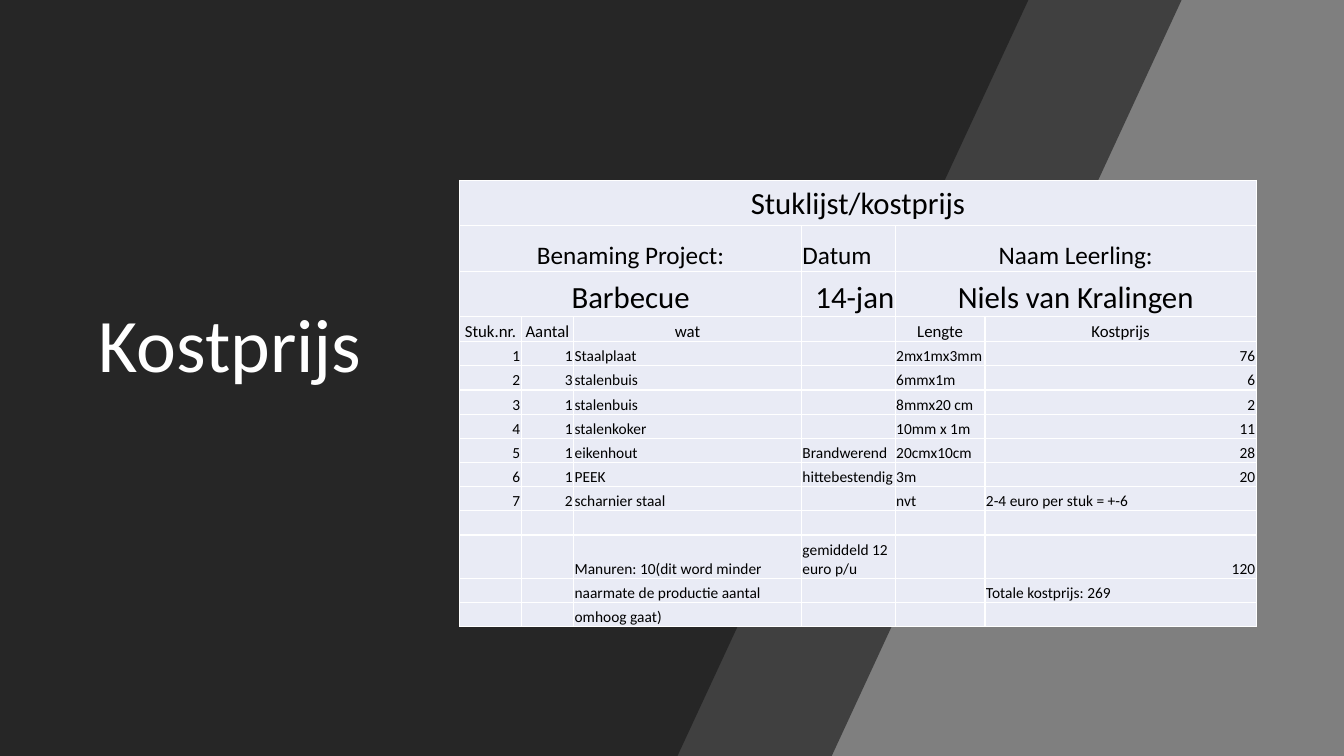
from lxml import etree
from pptx import Presentation
from pptx.dml.color import RGBColor
from pptx.enum.shapes import MSO_SHAPE
from pptx.enum.text import MSO_ANCHOR, PP_ALIGN
from pptx.oxml.ns import qn
from pptx.util import Inches, Pt

LEFT, MID, RIGHT = PP_ALIGN.LEFT, PP_ALIGN.CENTER, PP_ALIGN.RIGHT
CENTRE, BOTTOM = MSO_ANCHOR.MIDDLE, MSO_ANCHOR.BOTTOM
RECT = MSO_SHAPE.RECTANGLE

FONT = "Calibri"
COLORS = {"back": "7C7C7C", "grey": "7F7F7F", "dark": "262626",
          "cell": "E9EBF5", "white": "FFFFFF", "black": "000000"}
WIDE, HIGH = 13.33, 7.5
TITLE = "Kostprijs"
BANDS = [
    ([(1.36, HIGH), (8.25, HIGH), (11.72, 0), (1.36, 0)], 70),
    ([(0, HIGH), (6.72, HIGH), (10.2, 0), (0, 0)], 100),
]
COLS = [0.61, 0.52, 2.26, 0.93, 0.89, 2.69]
ROWS = [
    ["Stuklijst/kostprijs", "", "", "", "", ""],
    ["Benaming Project:", "", "", "Datum", "Naam Leerling:", ""],
    ["Barbecue", "", "", "14-jan", "Niels van Kralingen", ""],
    ["Stuk.nr.", "Aantal", "wat", "", "Lengte", "Kostprijs"],
    ["1", "1", "Staalplaat", "", "2mx1mx3mm", "76"],
    ["2", "3", "stalenbuis", "", "6mmx1m", "6"],
    ["3", "1", "stalenbuis", "", "8mmx20 cm", "2"],
    ["4", "1", "stalenkoker", "", "10mm x 1m", "11"],
    ["5", "1", "eikenhout", "Brandwerend", "20cmx10cm", "28"],
    ["6", "1", "PEEK", "hittebestendig", "3m", "20"],
    ["7", "2", "scharnier staal", "", "nvt", "2-4 euro per stuk = +-6"],
    ["", "", "", "", "", ""],
    ["", "", "Manuren: 10(dit word minder", "gemiddeld 12 euro p/u", "", "120"],
    ["", "", "naarmate de productie aantal", "", "", "Totale kostprijs: 269"],
    ["", "", "omhoog gaat)", "", "", ""],
]
HEAD = 4
SIZES = [22, 18, 22, 12] + [11] * (len(ROWS) - HEAD)
TALL = [0.45] * 3 + [0.25] + [0.24] * 8 + [0.43] + [0.24] * 2
SPANS = [(0, 0, 5), (1, 0, 2), (1, 4, 5), (2, 0, 2), (2, 4, 5)]
ALIGN = {"Datum": LEFT, "14-jan": RIGHT}


def rgb(name):
    return RGBColor.from_string(COLORS[name])


def paint(shape, name):
    shape.shadow.inherit = False
    shape.fill.solid()
    shape.fill.fore_color.rgb = rgb(name)
    shape.line.fill.background()


def write(frame, text, size, color="black", align=LEFT, space=None):
    para = frame.paragraphs[0]
    para.alignment, para.line_spacing = align, space
    if text:
        run = para.add_run()
        run.text = text
        run.font.name, run.font.size = FONT, Pt(size)
        run.font.color.rgb = rgb(color)
    else:
        end = etree.SubElement(para._p, qn("a:endParaRPr"))
        end.set("sz", str(size * 100))


def edge(cell):
    props = cell._tc.get_or_add_tcPr()
    for spot, side in enumerate("LRTB"):
        line = etree.Element(qn("a:ln" + side), w=str(Pt(1)))
        fill = etree.SubElement(line, qn("a:solidFill"))
        etree.SubElement(fill, qn("a:srgbClr"), val=COLORS["white"])
        props.insert(spot, line)


def place(cell, row, text):
    cell.margin_left = cell.margin_right = cell.margin_top = Inches(0.01)
    cell.margin_bottom = 0
    cell.vertical_anchor = BOTTOM if row else CENTRE
    cell.fill.solid()
    cell.fill.fore_color.rgb = rgb("cell")
    edge(cell)
    base = MID if row < HEAD else RIGHT if text.isdigit() else LEFT
    write(cell.text_frame, text, SIZES[row], align=ALIGN.get(text, base))


def main():
    """Build the cost price slide."""
    deck = Presentation()
    deck.slide_width, deck.slide_height = Inches(WIDE), Inches(HIGH)
    slide = deck.slides.add_slide(deck.slide_layouts[6])
    slide.background.fill.solid()
    slide.background.fill.fore_color.rgb = rgb("back")
    shapes = slide.shapes
    paint(shapes.add_shape(RECT, 0, 0, Inches(WIDE), Inches(HIGH)), "grey")

    for points, alpha in BANDS:
        start, *rest = [(Inches(x), Inches(y)) for x, y in points]
        pen = shapes.build_freeform(*start)
        pen.add_line_segments(rest, close=True)
        band = pen.convert_to_shape()
        paint(band, "dark")
        if alpha < 100:
            tint = band.fill._xPr.find(qn("a:solidFill"))[0]
            etree.SubElement(tint, qn("a:alpha"), val=str(alpha * 1000))

    box = shapes.add_textbox(*map(Inches, (0.88, 1.05, 7.04, 2.86)))
    box.text_frame.word_wrap = True
    box.text_frame.vertical_anchor = BOTTOM
    write(box.text_frame, TITLE, 54, color="white", space=0.9)

    area = map(Inches, (4.56, 1.79, sum(COLS), sum(TALL)))
    table = shapes.add_table(len(ROWS), len(COLS), *area).table
    table.first_row = table.horz_banding = False
    for col, width in zip(table.columns, COLS):
        col.width = Inches(width)
    for row, height in zip(table.rows, TALL):
        row.height = Inches(height)
    for r, texts in enumerate(ROWS):
        for c, text in enumerate(texts):
            place(table.cell(r, c), r, text)
    for row, first, last in SPANS:
        table.cell(row, first).merge(table.cell(row, last))
    deck.save("out.pptx")


if __name__ == "__main__":
    main()
